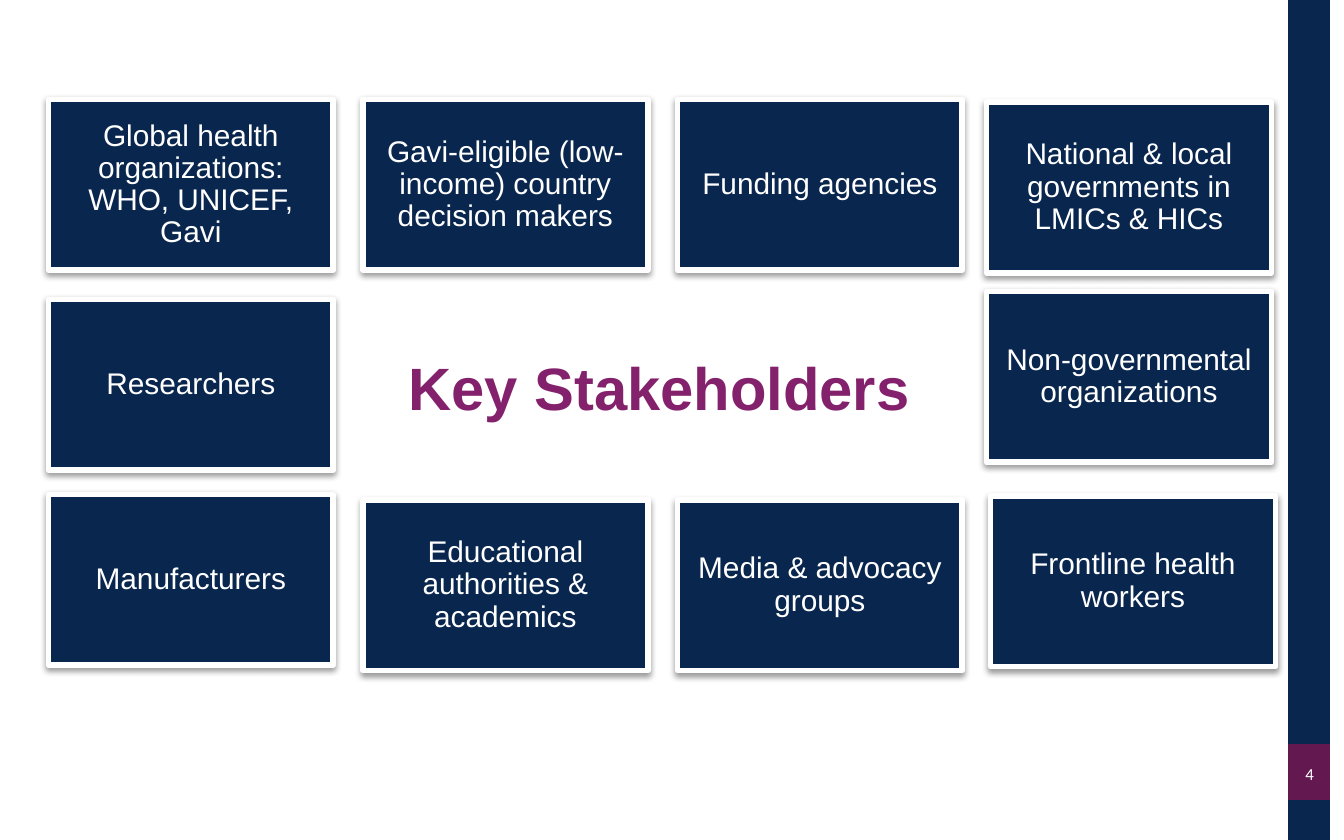
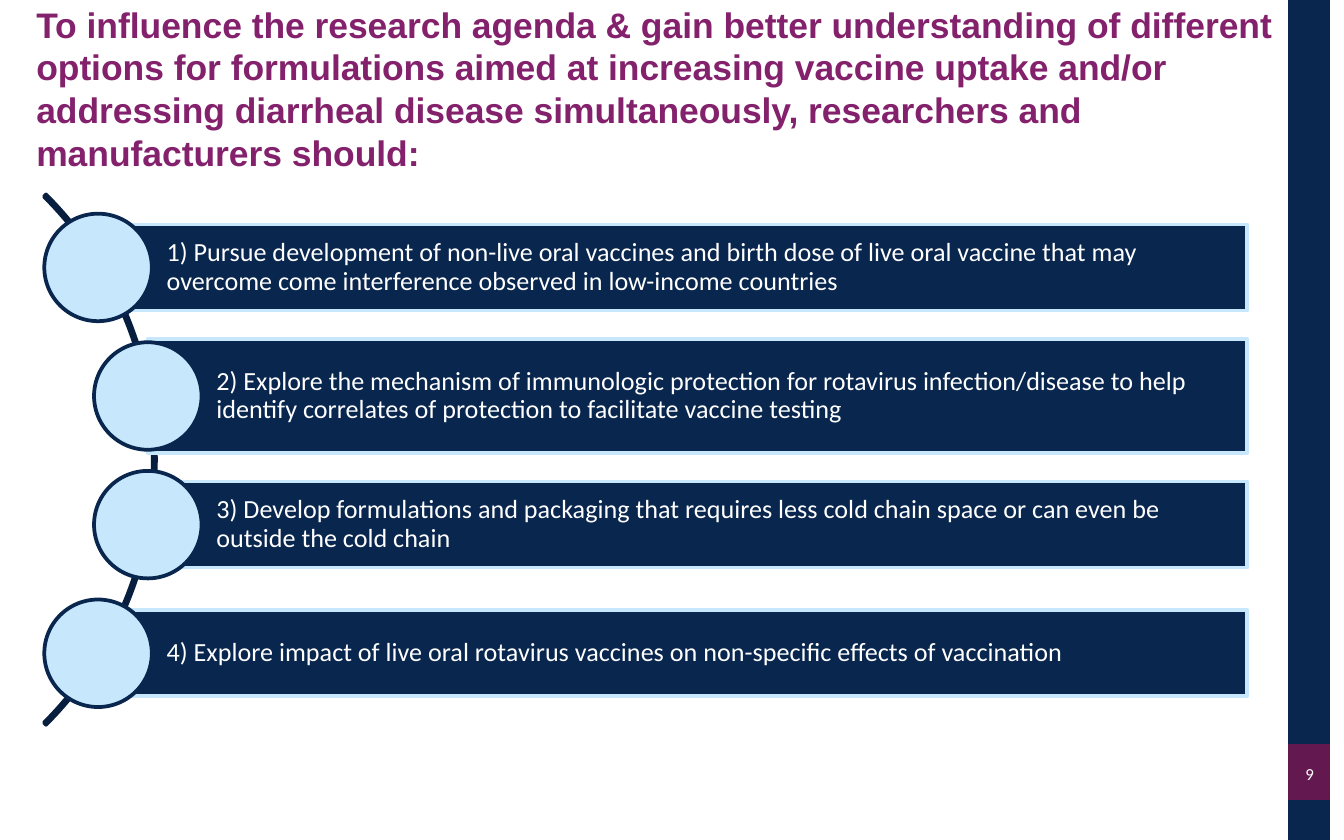
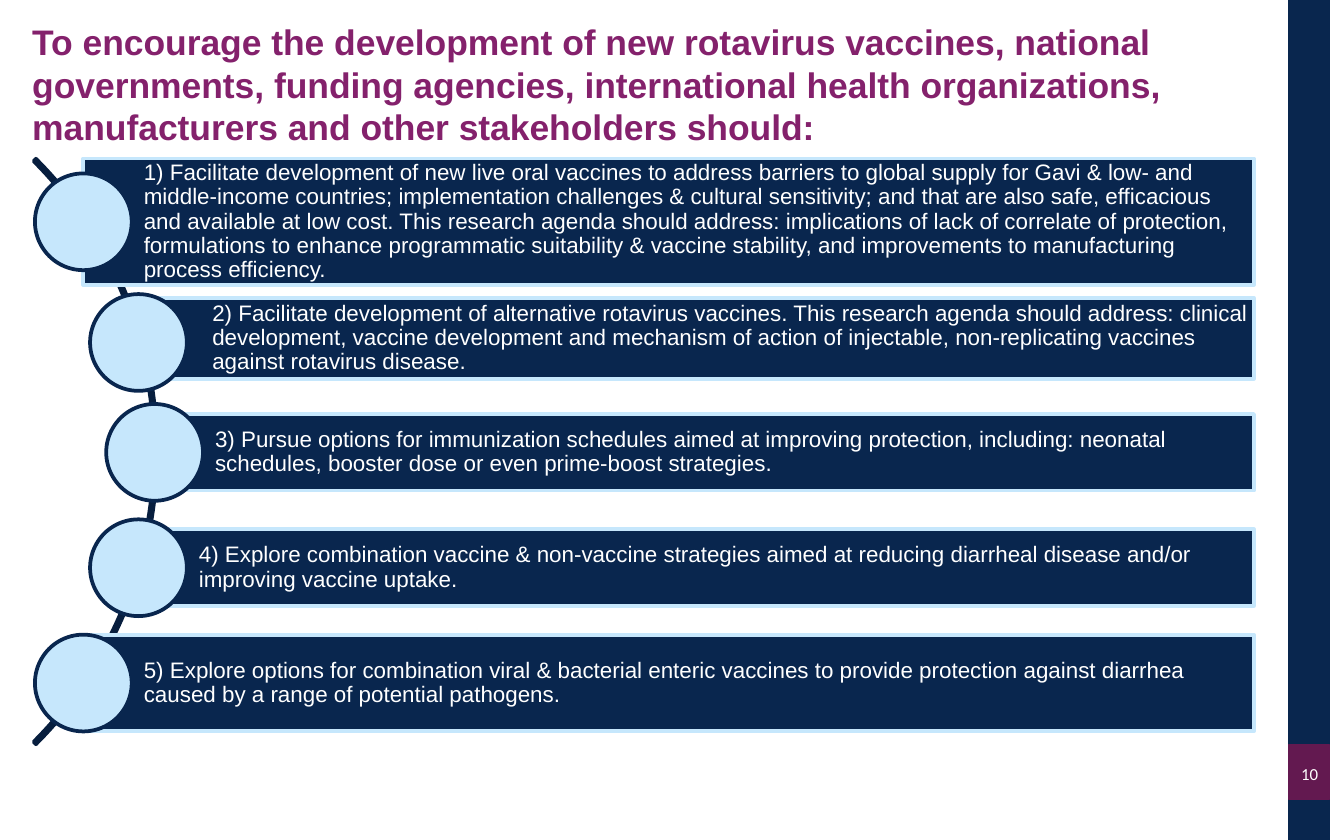
"""Build three slides on rotavirus vaccine stakeholders and their tasks."""
from lxml import etree
from pptx import Presentation
from pptx.dml.color import RGBColor
from pptx.enum.shapes import MSO_SHAPE
from pptx.enum.text import MSO_ANCHOR, PP_ALIGN
from pptx.oxml import parse_xml
from pptx.oxml.ns import nsdecls, qn
from pptx.util import Inches, Pt

NAVY = RGBColor(0x09, 0x26, 0x4E)
DARK_NAVY = RGBColor(0x07, 0x1E, 0x3E)
PLUM = RGBColor(0x63, 0x19, 0x50)
PURPLE = RGBColor(0x84, 0x21, 0x6C)
SKY = RGBColor(0xC6, 0xE7, 0xFC)
WHITE = RGBColor(0xFF, 0xFF, 0xFF)

SLIDE_W, SLIDE_H = 10, 6.25
BAND_X, BAND_W = 9.59, 0.3
TEXT_INSETS = (0.08, 0.04, 0.08, 0.04)

GRID_X, GRID_Y = 0.36, 0.74
COL_STEP, ROW_STEP = 2.34, 1.47
BOX_W, BOX_H = 2.12, 1.27

# text, column, row, nudge right, nudge down
STAKEHOLDERS = [
    ("Global health organizations: WHO, UNICEF, Gavi", 0, 0, 0, 0),
    ("Gavi-eligible (low-income) country decision makers", 1, 0, 0, 0),
    ("Funding agencies", 2, 0, 0, 0),
    ("Manufacturers", 0, 2, 0, 0),
    ("Researchers", 0, 1, 0, 0.02),
    ("National & local governments in LMICs & HICs", 3, 0, -0.04, 0.02),
    ("Non-governmental organizations", 3, 1, -0.04, -0.04),
    ("Frontline health workers", 3, 2, -0.01, 0.01),
    ("Educational authorities & academics", 1, 2, 0, 0.04),
    ("Media & advocacy groups", 2, 2, 0, 0.04),
]

# Each item: text, circle centre x, bar height, circle drop, bar shift, bar drop
AGENDAS = [
    dict(
        number=9,
        title="To influence the research agenda & gain better understanding of "
              "different options for formulations aimed at increasing vaccine "
              "uptake and/or addressing diarrheal disease simultaneously, "
              "researchers and manufacturers should:",
        title_box=(0.19, 0.25, 9.71, 0.81),
        arc=(-4.42, 0.63, 5.58), first=1.99, step=0.957, circle=0.8, right=9.28,
        font="Calibri", size=14, insets=(0.51, 0.04, 0.04, 0.04),
        items=[
            ("1) Pursue development of non-live oral vaccines and birth dose of "
             "live oral vaccine that may overcome come interference observed in "
             "low-income countries", 0.73, 0.64, 0, 0, 0),
            ("2) Explore the mechanism of immunologic protection for rotavirus "
             "infection/disease to help identify correlates of protection to "
             "facilitate vaccine testing", 1.1, 0.85, 0, 0, 0),
            ("3) Develop formulations and packaging that requires less cold "
             "chain space or can even be outside the cold chain",
             1.1, 0.64, 0, 0, 0),
            ("4) Explore impact of live oral rotavirus vaccines on non-specific "
             "effects of vaccination", 0.73, 0.64, 0, 0, 0),
        ]),
    dict(
        number=10,
        title="To encourage the development of new rotavirus vaccines, national "
              "governments, funding agencies, international health "
              "organizations, manufacturers and other stakeholders should:",
        title_box=(0.16, 0.09, 9.71, 1.07),
        arc=(-4.99, 0.28, 6.16), first=1.65, step=0.858, circle=0.72, right=9.33,
        font="Arial", size=12, insets=(0.45, 0.03, 0.03, 0.03),
        items=[
            ("1) Facilitate development of new live oral vaccines to address "
             "barriers to global supply for Gavi & low- and middle-income "
             "countries; implementation challenges & cultural sensitivity; and "
             "that are also safe, efficacious and available at low cost. This "
             "research agenda should address: implications of lack of correlate "
             "of protection, formulations to enhance programmatic suitability & "
             "vaccine stability, and improvements to manufacturing process "
             "efficiency.", 0.62, 0.94, 0, 0, 0),
            ("2) Facilitate development of alternative rotavirus vaccines. This "
             "research agenda should address: clinical development, vaccine "
             "development and mechanism of action of injectable, "
             "non-replicating vaccines against rotavirus disease.",
             1.03, 0.6, 0.04, 0.1, 0.01),
            ("3) Pursue options for immunization schedules aimed at improving "
             "protection, including: neonatal schedules, booster dose or even "
             "prime-boost strategies.", 1.15, 0.57, 0, 0, 0),
            ("4) Explore combination vaccine & non-vaccine strategies aimed at "
             "reducing diarrheal disease and/or improving vaccine uptake.",
             1.03, 0.57, 0, 0, 0),
            ("5) Explore options for combination viral & bacterial enteric "
             "vaccines to provide protection against diarrhea caused by a range "
             "of potential pathogens.", 0.62, 0.72, 0, 0, 0),
        ]),
]


def write(sp, text, size, font="Arial", color=WHITE, bold=False,
          align=PP_ALIGN.LEFT, spacing=None, insets=TEXT_INSETS):
    tf = sp.text_frame
    tf.word_wrap = True
    tf.vertical_anchor = MSO_ANCHOR.MIDDLE
    tf.margin_left, tf.margin_top, tf.margin_right, tf.margin_bottom = map(Inches, insets)
    p = tf.paragraphs[0]
    p.text = text
    p.alignment = align
    if spacing:
        p.line_spacing = spacing
    p.font.size = Pt(size)
    p.font.name = font
    p.font.bold = bold
    p.font.color.rgb = color


def add_shape(s, kind, box, fill, line, width):
    sp = s.shapes.add_shape(kind, *map(Inches, box))
    sp.shadow.inherit = False
    if fill is None:
        sp.fill.background()
    else:
        sp.fill.solid()
        sp.fill.fore_color.rgb = fill
    sp.line.color.rgb = line
    sp.line.width = Pt(width)
    return sp


def add_text(s, box, text, size, **style):
    write(s.shapes.add_textbox(*map(Inches, box)), text, size, **style)


def add_shadow(sp):
    effects = sp._element.spPr.find(qn("a:effectLst"))
    effects.append(parse_xml(
        f'<a:outerShdw {nsdecls("a")} blurRad="40000" dist="20000" dir="5400000" '
        'rotWithShape="0"><a:srgbClr val="000000"><a:alpha val="38000"/>'
        '</a:srgbClr></a:outerShdw>'))


def add_base(prs, number):
    s = prs.slides.add_slide(prs.slide_layouts[6])
    rect = MSO_SHAPE.RECTANGLE
    add_shape(s, rect, (BAND_X, 0, BAND_W, SLIDE_H), NAVY, NAVY, 0.75)
    add_shape(s, rect, (BAND_X, 5.54, BAND_W, 0.41), PLUM, PLUM, 0.75)
    add_text(s, (BAND_X, 5.59, 0.31, 0.33), str(number), 9, font="Calibri",
             align=PP_ALIGN.CENTER)
    return s


def add_title(s, box, text, size, align=PP_ALIGN.LEFT):
    add_text(s, box, text, size, color=PURPLE, bold=True, align=align)


def build_stakeholders(prs):
    s = add_base(prs, 4)
    for text, col, row, dx, dy in STAKEHOLDERS:
        box = (GRID_X + col * COL_STEP + dx, GRID_Y + row * ROW_STEP + dy, BOX_W, BOX_H)
        sp = add_shape(s, MSO_SHAPE.RECTANGLE, box, NAVY, WHITE, 3)
        add_shadow(sp)
        write(sp, text, 16, align=PP_ALIGN.CENTER, spacing=0.9, insets=(0.07,) * 4)
    add_title(s, (2.73, 2.36, 4.35, 1.04), "Key Stakeholders", 32, PP_ALIGN.CENTER)


def build_agenda(prs, agenda):
    s = add_base(prs, agenda["number"])
    add_title(s, agenda["title_box"], agenda["title"], 19)
    x, y, d = agenda["arc"]
    arc = add_shape(s, MSO_SHAPE.BLOCK_ARC, (x, y, d, d), None, DARK_NAVY, 2)
    for i, value in enumerate((189, 27, 0.004)):
        arc.adjustments[i] = value
    size = agenda["circle"]
    for i, (text, cx, h, drop, bar_dx, bar_dy) in enumerate(agenda["items"]):
        cy = agenda["first"] + i * agenda["step"]
        left = cx + bar_dx
        bar = add_shape(s, MSO_SHAPE.RECTANGLE,
                        (left, cy + bar_dy - h / 2, agenda["right"] - left, h),
                        NAVY, SKY, 2)
        write(bar, text, agenda["size"], font=agenda["font"], spacing=0.9,
              insets=agenda["insets"])
        add_shape(s, MSO_SHAPE.OVAL,
                  (cx - size / 2, cy + drop - size / 2, size, size), SKY, NAVY, 2)


def main():
    prs = Presentation()
    prs.slide_width, prs.slide_height = Inches(SLIDE_W), Inches(SLIDE_H)
    build_stakeholders(prs)
    for agenda in AGENDAS:
        build_agenda(prs, agenda)
    prs.save("out.pptx")


if __name__ == "__main__":
    main()
